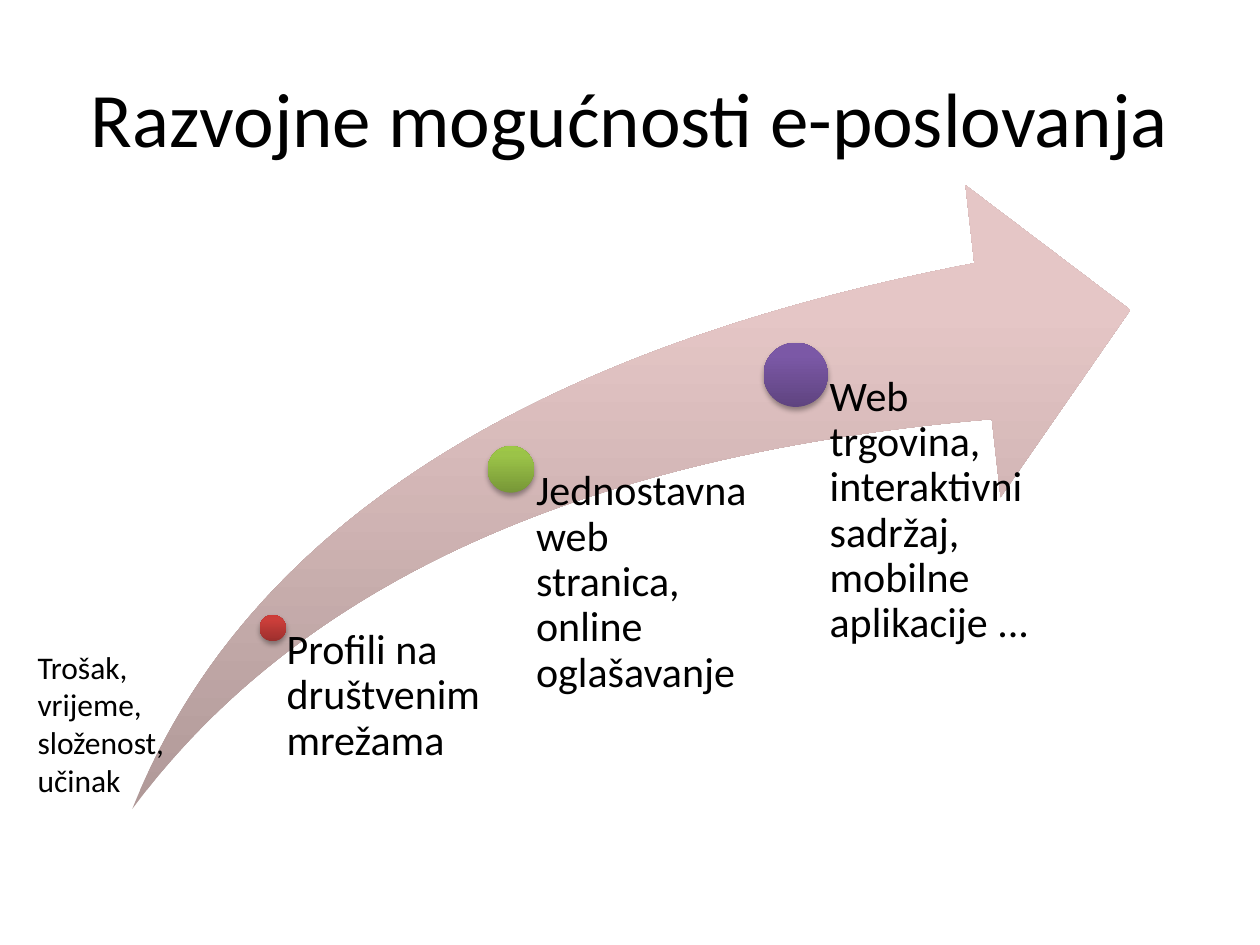
from copy import deepcopy

from lxml import etree
from pptx import Presentation
from pptx.dml.color import RGBColor
from pptx.enum import shapes, text
from pptx.oxml.ns import qn
from pptx.util import Inches, Pt

FONT = "Calibri"
BLACK = "000000"
STOP_POSITIONS = (0, 0.8, 1)
ARROW_COLORS = ("B09998", "E5C6C6", "E6C7C6")

# Dot left, top and diameter, text width and inset, gradient colours, wording
STEPS = [
    (2.06, 4.88, 0.21, 1.85, 0.11, ("9C2F2D", "CB3E3A", "CE3B37"),
     "Profili na društvenim mrežama"),
    (3.87, 3.54, 0.37, 1.9, 0.2, ("779737", "9BC348", "9DC746"),
     "Jednostavna web stranica, online oglašavanje"),
    (6.06, 2.72, 0.51, 1.9, 0.27, ("5F4480", "7B58A6", "7C57A8"),
     "Web trgovina, interaktivni sadržaj, mobilne aplikacije ..."),
]


def color(value):
    return RGBColor.from_string(value)


def add_text(slide, box, wording, size):
    shape = slide.shapes.add_textbox(*map(Inches, box))
    frame = shape.text_frame
    frame.word_wrap = True
    frame.text = wording
    font = frame.paragraphs[0].runs[0].font
    font.name = FONT
    font.size = Pt(size)
    font.color.rgb = color(BLACK)
    return frame


def add_gradient_shape(slide, kind, box, colors):
    """Add a borderless shape shaded from bottom to top through three colours."""
    shape = slide.shapes.add_shape(kind, *map(Inches, box))
    shape.shadow.inherit = False
    shape.line.fill.background()
    shape.fill.gradient()
    shape.fill.gradient_angle = 90
    stop_list = shape.element.spPr.find(".//" + qn("a:gsLst"))
    stop_list.append(deepcopy(stop_list[-1]))
    for stop, position, value in zip(shape.fill.gradient_stops, STOP_POSITIONS, colors):
        stop.position = position
        stop.color.rgb = color(value)
    return shape


def add_drop_shadow(shape):
    effects = shape.element.spPr.find(qn("a:effectLst"))
    shadow = etree.SubElement(
        effects, qn("a:outerShdw"), blurRad=str(Pt(3.1)), dist=str(Pt(1.8)),
        dir="5400000", rotWithShape="0")
    shade = etree.SubElement(shadow, qn("a:srgbClr"), val=BLACK)
    etree.SubElement(shade, qn("a:alpha"), val="35000")


def add_title(slide, box):
    frame = add_text(slide, box, "Razvojne mogućnosti e-poslovanja", 44)
    frame.vertical_anchor = text.MSO_ANCHOR.MIDDLE
    frame.paragraphs[0].alignment = text.PP_ALIGN.CENTER


def add_step(slide, step, bottom):
    """Add a dot and its text, which runs from the dot's centre to the bottom."""
    left, top, diameter, width, inset, colors, wording = step
    dot = add_gradient_shape(
        slide, shapes.MSO_SHAPE.OVAL, (left, top, diameter, diameter), colors)
    add_drop_shadow(dot)

    center_x, center_y = left + diameter / 2, top + diameter / 2
    frame = add_text(slide, (center_x, center_y, width, bottom - center_y), wording, 24)
    frame.margin_left = Inches(inset)
    frame.margin_top = frame.margin_right = frame.margin_bottom = 0
    frame.paragraphs[0].line_spacing = 0.9


def add_growth_arrow(slide, box):
    arrow = add_gradient_shape(slide, shapes.MSO_SHAPE.SWOOSH_ARROW, box, ARROW_COLORS)
    arrow.adjustments[0] = arrow.adjustments[1] = 0.25
    bottom = box[1] + box[3]
    for step in STEPS:
        add_step(slide, step, bottom)


def add_factors(slide, box):
    frame = add_text(slide, box, "Trošak, vrijeme, složenost, učinak", 18)
    frame.auto_size = text.MSO_AUTO_SIZE.SHAPE_TO_FIT_TEXT


def main():
    presentation = Presentation()
    presentation.slide_width = Inches(10)
    presentation.slide_height = Inches(7.5)
    slide = presentation.slides.add_slide(presentation.slide_layouts[6])
    add_title(slide, (0.5, 0.3, 9, 1.25))
    add_growth_arrow(slide, (1.05, 1.47, 7.92, 4.95))
    add_factors(slide, (0.2, 5.09, 1.5, 1.31))
    presentation.save("out.pptx")


if __name__ == "__main__":
    main()
